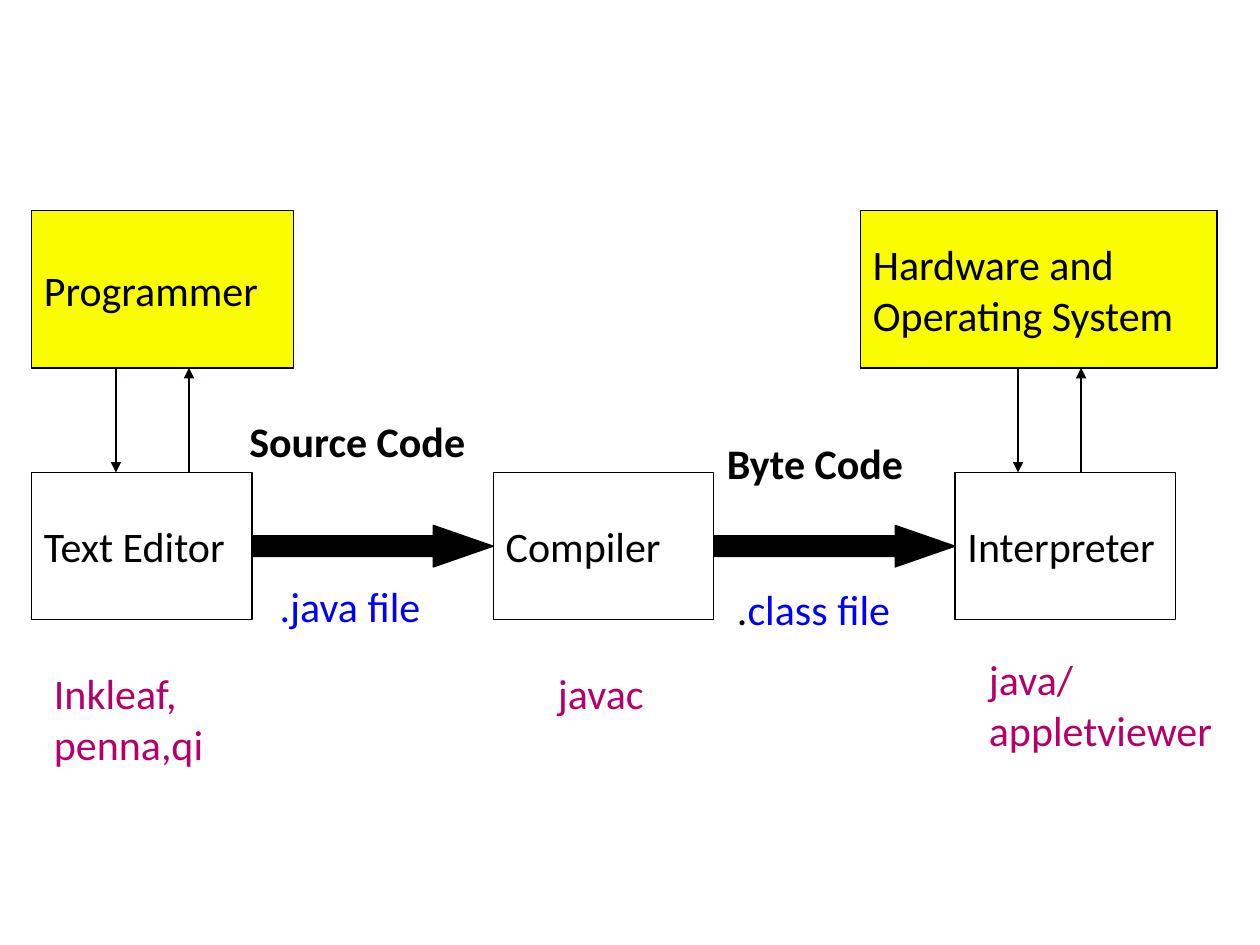
from lxml.etree import SubElement
from pptx import Presentation
from pptx.dml.color import RGBColor
from pptx.enum.shapes import MSO_CONNECTOR, MSO_SHAPE
from pptx.enum.text import MSO_ANCHOR, PP_ALIGN
from pptx.oxml.ns import qn
from pptx.util import Inches, Pt

COLORS = {"black": "000000", "white": "FFFFFF", "yellow": "FAFD00",
          "blue": "0000FF", "magenta": "B50069"}

# Tool chain: equal boxes on one row, evenly spaced from left to right
STAGES = ["Text Editor", "Compiler", "Interpreter"]
STAGE_LEFT, STAGE_TOP, STAGE_WIDTH, STAGE_HEIGHT = 0.25, 3.75, 1.75, 1.17
STAGE_PITCH = 3.665
ARROW_TOP, ARROW_HEIGHT = 4.17, 0.33

# Outside parties: lines of text, left, width, x of the down and up arrows
PARTIES = [
    (["Programmer"], 0.25, 2.08, (0.92, 1.5)),
    (["Hardware and", "Operating System"], 6.83, 2.83, (8.08, 8.58)),
]
PARTY_TOP, PARTY_HEIGHT = 1.67, 1.25

# Labels: paragraphs of (text, color) spans, left, top, width, height, bold
LABELS = [
    ([[("Source Code", "black")]], 1.88, 3.25, 2.28, 0.5, True),
    ([[("Byte Code", "black")]], 5.67, 3.42, 1.92, 0.5, True),
    ([[(".java file", "blue")]], 2.12, 4.56, 1.45, 0.5, False),
    ([[(".", "black"), ("class file", "blue")]], 5.75, 4.58, 1.59, 0.5, False),
    ([[("Inkleaf, penna,qi", "magenta")]], 0.33, 5.25, 1.7, 0.9, False),
    ([[("javac", "magenta")]], 4.33, 5.25, 0.97, 0.5, False),
    ([[("java/", "magenta")], [("appletviewer", "magenta")]],
     7.75, 5.14, 2.05, 0.91, False),
]


def color(name):
    return RGBColor.from_string(COLORS[name])


def write(box, paragraphs, size=24, bold=False, anchor=MSO_ANCHOR.TOP):
    frame = box.text_frame
    frame.word_wrap = True
    frame.vertical_anchor = anchor
    for index, spans in enumerate(paragraphs):
        para = frame.add_paragraph() if index else frame.paragraphs[0]
        para.alignment = PP_ALIGN.LEFT
        for text, color_name in spans:
            span = para.add_run()
            span.text = text
            span.font.name = "Calibri"
            span.font.size = Pt(size)
            span.font.bold = bold
            span.font.color.rgb = color(color_name)


def add_block(page, kind, left, top, width, height, fill, lines=()):
    """Add an outlined shape, with one black paragraph for each line."""
    block = page.shapes.add_shape(
        kind, Inches(left), Inches(top), Inches(width), Inches(height))
    block.shadow.inherit = False
    block.fill.solid()
    block.fill.fore_color.rgb = color(fill)
    block.line.color.rgb = color("black")
    block.line.width = Pt(0.75)
    if lines:
        write(block, [[(line, "black")] for line in lines],
              anchor=MSO_ANCHOR.MIDDLE)
    return block


def add_vertical_arrow(page, x, start, end):
    arrow = page.shapes.add_connector(
        MSO_CONNECTOR.STRAIGHT, Inches(x), Inches(start), Inches(x), Inches(end))
    arrow.line.color.rgb = color("black")
    arrow.line.width = Pt(0.75)
    SubElement(arrow.line._get_or_add_ln(), qn("a:tailEnd"), type="triangle")
    SubElement(arrow._element.spPr, qn("a:effectLst"))


def main():
    deck = Presentation()
    deck.slide_width, deck.slide_height = Inches(10), Inches(7.5)
    page = deck.slides.add_slide(deck.slide_layouts[6])

    for index, name in enumerate(STAGES):
        left = STAGE_LEFT + index * STAGE_PITCH
        add_block(page, MSO_SHAPE.RECTANGLE, left, STAGE_TOP,
                  STAGE_WIDTH, STAGE_HEIGHT, "white", [name])
        if index < len(STAGES) - 1:
            flow = add_block(page, MSO_SHAPE.RIGHT_ARROW, left + STAGE_WIDTH,
                             ARROW_TOP, STAGE_PITCH - STAGE_WIDTH,
                             ARROW_HEIGHT, "black")
            flow.adjustments[1] = 1.44

    party_bottom = PARTY_TOP + PARTY_HEIGHT
    for lines, left, width, (down, up) in PARTIES:
        add_block(page, MSO_SHAPE.RECTANGLE, left, PARTY_TOP,
                  width, PARTY_HEIGHT, "yellow", lines)
        add_vertical_arrow(page, down, party_bottom, STAGE_TOP)
        add_vertical_arrow(page, up, STAGE_TOP, party_bottom)

    for paragraphs, left, top, width, height, bold in LABELS:
        box = page.shapes.add_textbox(
            Inches(left), Inches(top), Inches(width), Inches(height))
        write(box, paragraphs, bold=bold)

    deck.save("out.pptx")


if __name__ == "__main__":
    main()
